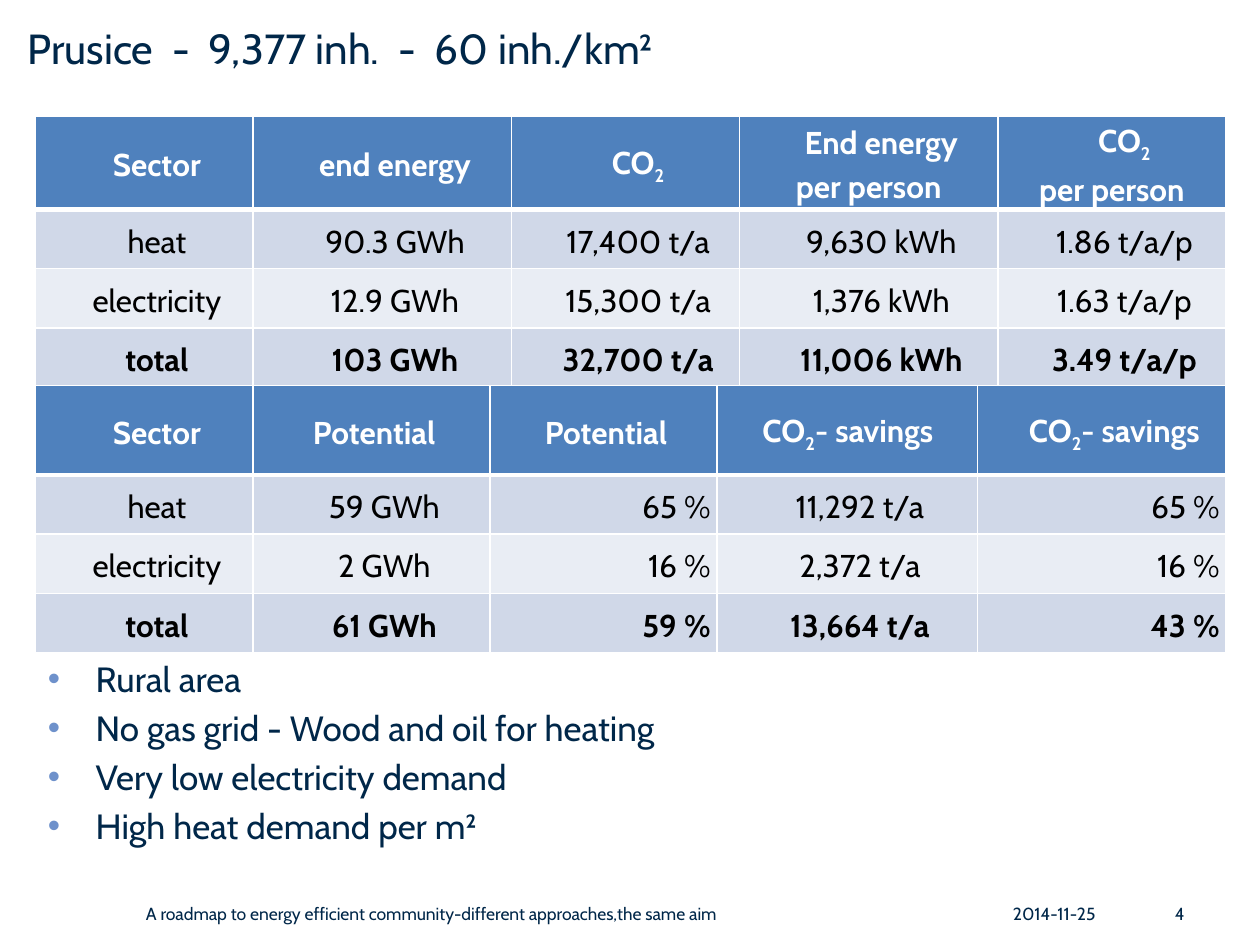
from dataclasses import dataclass

from lxml import etree
from pptx import Presentation
from pptx.dml.color import RGBColor
from pptx.enum.text import MSO_ANCHOR, MSO_AUTO_SIZE, PP_ALIGN
from pptx.oxml.ns import qn
from pptx.util import Inches, Pt

LEFT, CENTER, RIGHT = PP_ALIGN.LEFT, PP_ALIGN.CENTER, PP_ALIGN.RIGHT
TOP, MIDDLE = MSO_ANCHOR.TOP, MSO_ANCHOR.MIDDLE
NO_FIT = MSO_AUTO_SIZE.NONE


@dataclass(frozen=True)
class Theme:
    font: str = "Cabin"
    ink: str = "002749"
    black: str = "000000"
    white: str = "FFFFFF"
    head: str = "4F81BD"
    bands: tuple = ("D0D8E8", "E9EDF4")
    bullet: str = "6E91CB"
    title: int = 24
    body: int = 20
    cell: int = 18
    foot: int = 10


class Deck:
    def __init__(self, theme, slide):
        self.theme = theme
        self.slide = slide

    def style(self, para, size, color, bold=False):
        for run in para.runs:
            run.font.name = self.theme.font
            run.font.size = Pt(size)
            run.font.bold = bold
            run.font.color.rgb = RGBColor.from_string(color)

    def place(self, shape, box, anchor):
        shape.left, shape.top, shape.width, shape.height = map(Inches, box)
        frame = shape.text_frame
        frame.word_wrap = True
        frame.auto_size = NO_FIT
        frame.vertical_anchor = anchor
        return frame

    def title(self, text, box):
        frame = self.place(self.slide.shapes.title, box, TOP)
        frame.text = text
        para = frame.paragraphs[0]
        para.alignment = LEFT
        self.style(para, self.theme.title, self.theme.ink)

    def bullets(self, items, box):
        frame = self.place(self.slide.placeholders[1], box, TOP)
        frame.text = "\n".join(items)
        for i, para in enumerate(frame.paragraphs):
            para.space_before = Pt(4 if i else 0)
            props = para._p.get_or_add_pPr()
            props.set("marL", str(Inches(0.38)))
            props.set("indent", str(-Inches(0.38)))
            tint = etree.SubElement(props, qn("a:buClr"))
            etree.SubElement(tint, qn("a:srgbClr"), val=self.theme.bullet)
            etree.SubElement(props, qn("a:buFont"), typeface="Arial")
            etree.SubElement(props, qn("a:buChar"), char="•")
            self.style(para, self.theme.body, self.theme.ink)

    def label(self, text, box, align=LEFT):
        shape = self.slide.shapes.add_textbox(*map(Inches, box))
        frame = self.place(shape, box, MIDDLE)
        frame.text = text
        para = frame.paragraphs[0]
        para.alignment = align
        self.style(para, self.theme.foot, self.theme.ink)

    def borders(self, cell, row):
        widths = {"L": 1, "R": 1, "T": 3 if row == 1 else 1, "B": 1 if row else 3}
        props = cell._tc.get_or_add_tcPr()
        for i, (side, width) in enumerate(widths.items()):
            line = etree.Element(qn(f"a:ln{side}"), w=str(Pt(width)))
            fill = etree.SubElement(line, qn("a:solidFill"))
            etree.SubElement(fill, qn("a:srgbClr"), val=self.theme.white)
            props.insert(i, line)

    def add_text(self, para, text):
        for i, line in enumerate(text.split("\n")):
            if i:
                para.add_line_break()
            for j, part in enumerate(line.split("|")):
                if part:
                    run = para.add_run()
                    run.text = part
                    if j % 2:
                        run.font._element.set("baseline", "-25000")

    def fill(self, cell, text, row, align, indent):
        theme = self.theme
        color = theme.bands[(row - 1) % 2] if row else theme.head
        cell.fill.solid()
        cell.fill.fore_color.rgb = RGBColor.from_string(color)
        cell.vertical_anchor = MIDDLE
        cell.margin_left = cell.margin_right = Inches(0.05)
        cell.margin_top = cell.margin_bottom = 0
        self.borders(cell, row)
        para = cell.text_frame.paragraphs[0]
        self.add_text(para, text)
        para.alignment = align
        para.line_spacing = 1.15
        props = para._p.get_or_add_pPr()
        props.set("marL", "0")
        props.set("indent", str(Inches(indent)))
        ink = theme.black if row else theme.white
        self.style(para, theme.cell, ink, row in (0, 3))

    def table(self, rows, top, widths, head, indents, right=()):
        heights = [head] + [0.47] * (len(rows) - 1)
        box = (0.28, top, sum(widths), sum(heights))
        frame = self.slide.shapes.add_table(len(rows), len(widths), *map(Inches, box))
        table = frame.table
        for col, width in zip(table.columns, widths):
            col.width = Inches(width)
        for line, height in zip(table.rows, heights):
            line.height = Inches(height)
        for r, texts in enumerate(rows):
            for c, text in enumerate(texts):
                align = RIGHT if r and c in right else CENTER
                indent = 0.2 if r else indents[c]
                self.fill(table.cell(r, c), text, r, align, indent)


USE = [
    ("Sector", "end energy", "CO|2|", "End energy\nper person", "CO|2|\nper person"),
    ("heat", "90.3 GWh", "17,400 t/a", "9,630 kWh", "1.86 t/a/p"),
    ("electricity", "12.9 GWh", "15,300 t/a", "1,376 kWh", "1.63 t/a/p"),
    ("total", "103 GWh", "32,700 t/a", "11,006 kWh", "3.49 t/a/p"),
]
SAVINGS = [
    ("Sector", "Potential", "Potential", "CO|2|- savings", "CO|2|- savings"),
    ("heat", "59 GWh", "65 %", "11,292 t/a", "65 %"),
    ("electricity", "2 GWh", "16 %", "2,372 t/a", "16 %"),
    ("total", "61 GWh", "59 %", "13,664 t/a", "43 %"),
]
FACTS = [
    "Rural area",
    "No gas grid - Wood and oil for heating",
    "Very low electricity demand",
    "High heat demand per m²",
]
FOOTER = "A roadmap to energy efficient community-different approaches,the same aim"


def main():
    prs = Presentation()
    prs.slide_width, prs.slide_height = Inches(10), Inches(7.5)
    deck = Deck(Theme(), prs.slides.add_slide(prs.slide_layouts[1]))
    deck.title("Prusice  -  9,377 inh.  -  60 inh./km²", (0.12, 0.13, 9.53, 0.63))
    deck.bullets(FACTS, (0.28, 5.17, 9.45, 1.6))
    deck.table(USE, 0.92, (1.73, 2.05, 1.81, 2.05, 1.81), 0.73, [0.2] * 5)
    deck.table(SAVINGS, 3.06, (1.73, 1.88, 1.8, 2.07, 1.97), 0.71,
               (0.2, 0.04, 0.04, 0.01, 0.2), right=(2, 4))
    deck.label(FOOTER, (1.06, 7.05, 6.46, 0.4))
    deck.label("2014-11-25", (7.94, 7.05, 0.92, 0.4))
    deck.label("4", (8.86, 7.05, 0.64, 0.4), RIGHT)
    prs.save("out.pptx")


if __name__ == "__main__":
    main()
